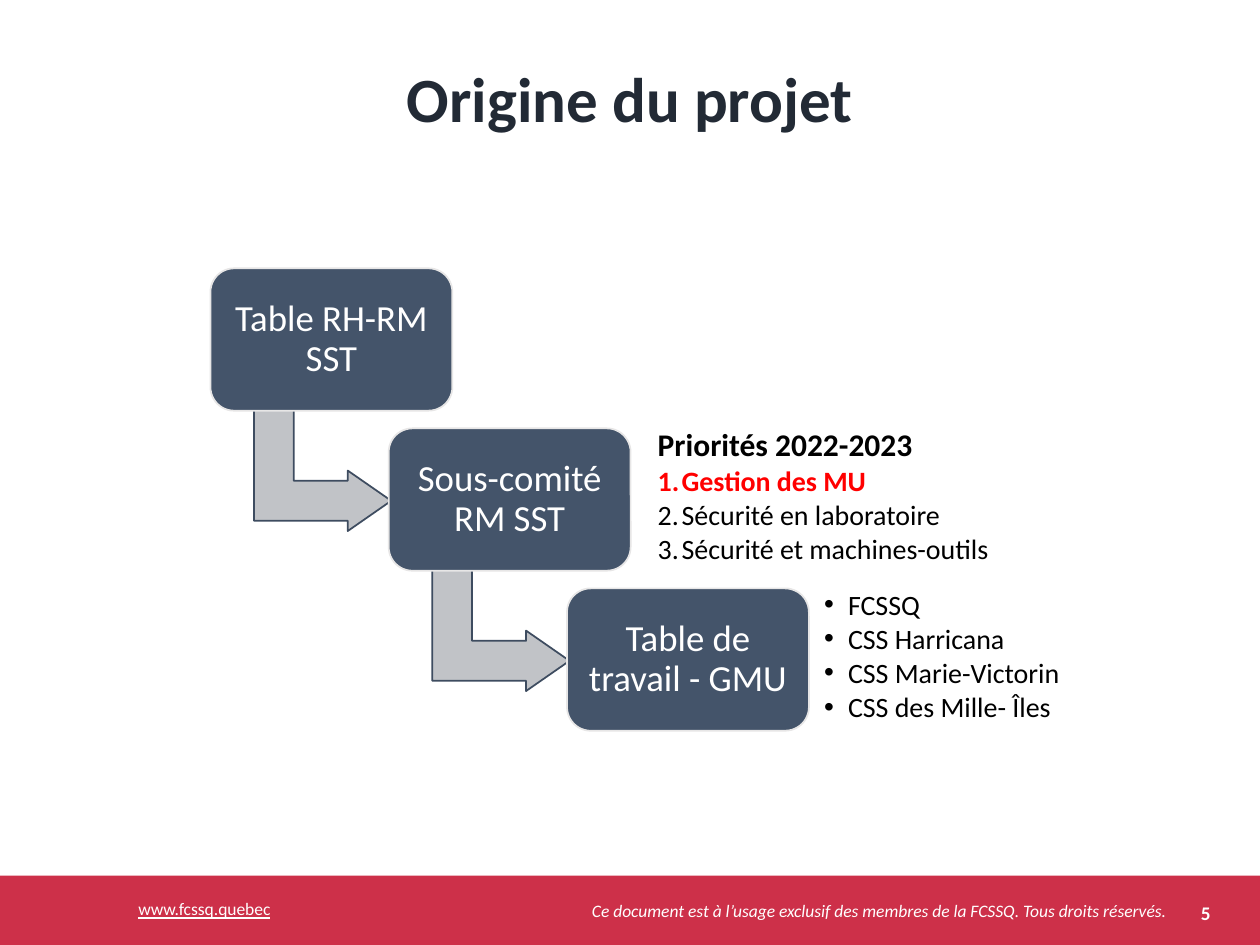
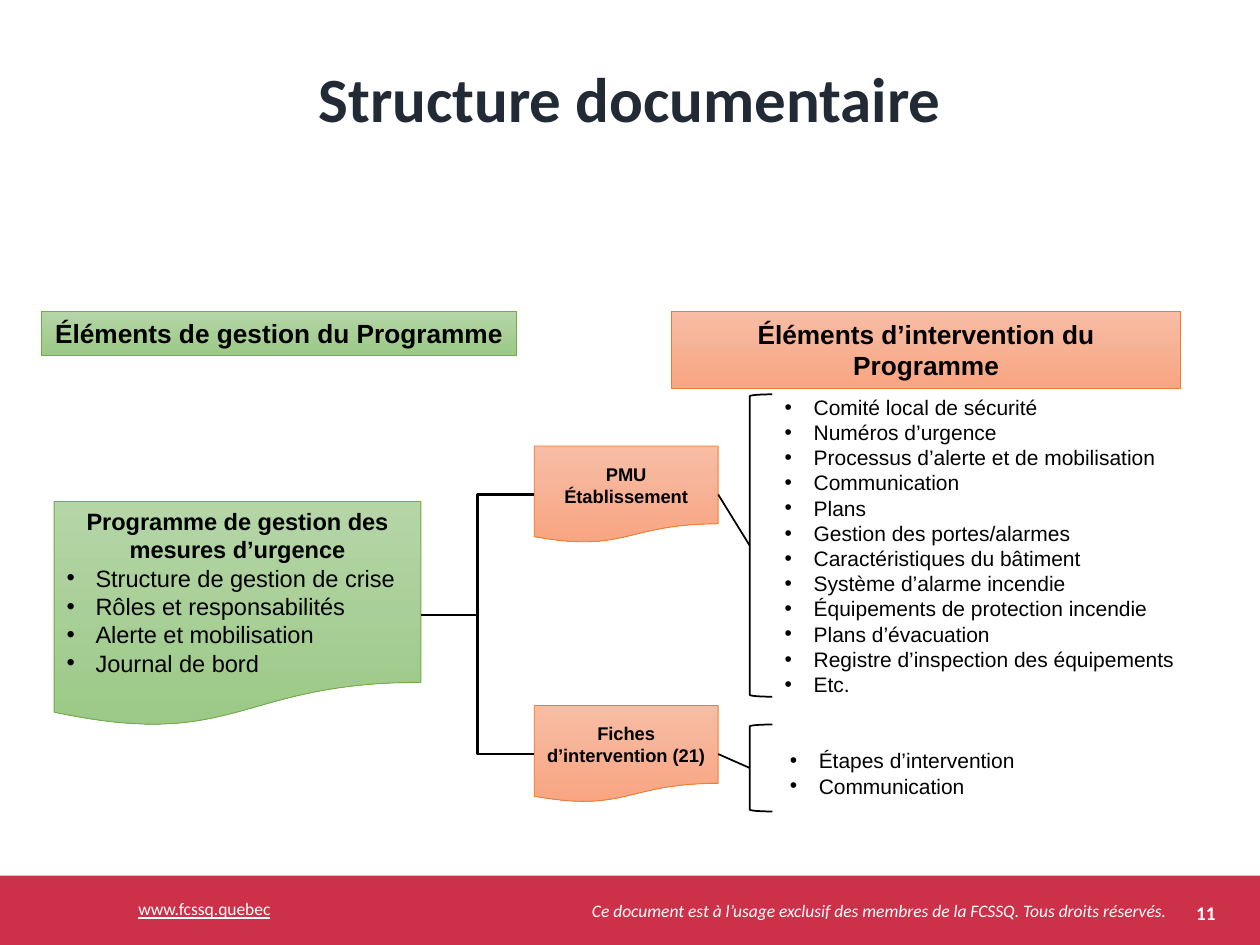
from dataclasses import dataclass

from lxml import etree
from pptx import Presentation
from pptx.dml.color import RGBColor
from pptx.enum.shapes import MSO_CONNECTOR, MSO_SHAPE
from pptx.enum.text import MSO_ANCHOR, PP_ALIGN
from pptx.oxml.ns import qn
from pptx.util import Inches, Pt

RECT, ROUNDED = MSO_SHAPE.RECTANGLE, MSO_SHAPE.ROUNDED_RECTANGLE
BENT_ARROW, BRACKET = MSO_SHAPE.BENT_UP_ARROW, MSO_SHAPE.LEFT_BRACKET
DOCUMENT = MSO_SHAPE.FLOWCHART_DOCUMENT
STRAIGHT, ELBOW = MSO_CONNECTOR.STRAIGHT, MSO_CONNECTOR.ELBOW
LEFT, CENTER = PP_ALIGN.LEFT, PP_ALIGN.CENTER
TOP, MIDDLE, BOTTOM = MSO_ANCHOR.TOP, MSO_ANCHOR.MIDDLE, MSO_ANCHOR.BOTTOM

COLUMNS, ROWS = 100, 75
SLIDE_WIDTH, SLIDE_HEIGHT = Inches(10), Inches(7.5)


@dataclass(frozen=True)
class Theme:
    heading_font: str = "Calibri"
    diagram_font: str = "Arial"
    white: str = "FFFFFF"
    black: str = "000000"
    title: str = "222A35"
    band: str = "CD3049"
    step: str = "44546A"
    step_edge: str = "E7E6E6"
    arrow: str = "C1C3C7"
    arrow_edge: str = "3E4C60"
    priority: str = "FF0000"
    management: tuple = ("B5D5A7", "9CC987", "70AD47")
    intervention: tuple = ("F7BDA5", "F8A582", "ED7D31")
    title_size: float = 36
    step_size: float = 21
    lead_size: float = 18
    note_size: float = 16
    heading_size: float = 15
    programme_size: float = 13.5
    list_size: float = 12
    page_size: float = 11
    document_size: float = 10.5
    footer_size: float = 10


THEME = Theme()


@dataclass(frozen=True)
class Line:
    text: str
    size: float
    color: str = THEME.black
    font: str = THEME.diagram_font
    bold: bool = False
    italic: bool = False
    underline: bool = False
    align: PP_ALIGN = LEFT
    bullet: str = ""
    hang: float = 0
    spacing: float = 1
    after: float = 0


def across(columns):
    return round(SLIDE_WIDTH * columns / COLUMNS)


def down(rows):
    return round(SLIDE_HEIGHT * rows / ROWS)


def place(area):
    left, top, width, height = area
    return across(left), down(top), across(width), down(height)


def rgb(color):
    return RGBColor.from_string(color)


def set_bullet(paragraph, line):
    properties = paragraph._p.get_or_add_pPr()
    properties.set("marL", str(across(line.hang)))
    properties.set("indent", str(-across(line.hang)))
    if line.bullet == "1.":
        etree.SubElement(properties, qn("a:buAutoNum"), type="arabicPeriod")
    elif line.bullet:
        etree.SubElement(properties, qn("a:buFont"), typeface=THEME.diagram_font)
        etree.SubElement(properties, qn("a:buChar"), char=line.bullet)


def write(shape, lines, anchor=MIDDLE, inset=(1, 0.5), wrap=True):
    frame = shape.text_frame
    frame.word_wrap = wrap
    frame.vertical_anchor = anchor
    frame.margin_left = frame.margin_right = across(inset[0])
    frame.margin_top = frame.margin_bottom = down(inset[1])
    for index, line in enumerate(lines):
        paragraph = frame.add_paragraph() if index else frame.paragraphs[0]
        set_bullet(paragraph, line)
        paragraph.alignment = line.align
        paragraph.line_spacing = line.spacing
        paragraph.space_after = Pt(line.after)
        run = paragraph.add_run()
        run.text = line.text
        run.font.name, run.font.size = line.font, Pt(line.size)
        run.font.bold, run.font.italic = line.bold, line.italic
        run.font.underline = line.underline
        run.font.color.rgb = rgb(line.color)


def add_label(slide, area, lines, **layout):
    write(slide.shapes.add_textbox(*place(area)), lines, **layout)


def add_block(slide, kind, area, fill, edge=None, weight=1):
    block = slide.shapes.add_shape(kind, *place(area))
    block.shadow.inherit = False
    block.fill.solid()
    block.fill.fore_color.rgb = rgb(fill)
    if edge:
        block.line.color.rgb = rgb(edge)
        block.line.width = Pt(weight)
    else:
        block.line.fill.background()
    return block


def add_panel(slide, kind, area, palette, lines):
    light, dark, edge = palette
    panel = add_block(slide, kind, area, light, edge, 0.5)
    panel.fill.gradient()
    panel.fill.gradient_angle = 270
    for stop, color in zip(panel.fill.gradient_stops, (light, dark)):
        stop.color.rgb = rgb(color)
    write(panel, lines)


def add_link(slide, kind, start, end, weight):
    link = slide.shapes.add_connector(
        kind, across(start[0]), down(start[1]), across(end[0]), down(end[1])
    )
    link.line.color.rgb = rgb(THEME.black)
    link.line.width = Pt(weight)
    etree.SubElement(link._element.spPr, qn("a:effectLst"))


def add_step(slide, left, top, text):
    step = add_block(slide, ROUNDED, (left, top, 19.2, 11.3), THEME.step, THEME.step_edge)
    write(step, [Line(text, THEME.step_size, THEME.white, THEME.heading_font,
                      align=CENTER, spacing=0.9)], inset=(0.9, 0.9))


def add_turn(slide, left, top):
    turn = add_block(slide, BENT_ARROW, (left + 4.1, top + 10.6, 9.6, 10.9),
                     THEME.arrow, THEME.arrow_edge)
    turn.rotation = 90
    for index, share in enumerate((0.33, 0.25, 0.36)):
        turn.adjustments[index] = share


def note(text, bullet, **style):
    return Line(text, **{"size": THEME.note_size, "font": THEME.heading_font,
                         "bullet": bullet, "hang": 1.9, "spacing": 0.9,
                         "after": 2.2, **style})


def bullets(texts, size):
    return [Line(text, size, bullet="•", hang=2.3) for text in texts]


def centered(text, size):
    return Line(text, size, bold=True, align=CENTER)


def add_document(slide, top, text, bracket_area, list_area, items):
    left, width, middle = 42.4, 14.6, top + 3.85
    bracket_left, bracket_top, _, bracket_height = bracket_area
    add_panel(slide, DOCUMENT, (left, top, width, 7.7), THEME.intervention,
              [centered(text, THEME.document_size)])
    add_block(slide, BRACKET, bracket_area, THEME.white, THEME.black)
    add_link(slide, STRAIGHT, (left + width, middle),
             (bracket_left, bracket_top + bracket_height / 2), 1)
    add_link(slide, ELBOW, (33.4, 48.8), (left, middle), 1.5)
    details = add_block(slide, RECT, list_area, THEME.white)
    write(details, bullets(items, THEME.list_size))


def start_slide(deck, title, page):
    slide = deck.slides.add_slide(deck.slide_layouts[6])
    small = {"size": THEME.footer_size, "color": THEME.white, "font": THEME.heading_font}
    add_block(slide, RECT, (0, 69.5, COLUMNS, 5.5), THEME.band)
    add_label(slide, (92.6, 71, 6.2, 2.9),
              [Line(page, THEME.page_size, THEME.white, THEME.heading_font,
                    bold=True, align=CENTER)], anchor=TOP)
    add_label(slide, (46, 70.9, 48.3, 2.7),
              [Line("Ce document est à l’usage exclusif des membres de la FCSSQ. "
                    "Tous droits réservés.", italic=True, **small)],
              anchor=TOP, wrap=False)
    add_label(slide, (10, 70.8, 13, 2.7),
              [Line("www.fcssq.quebec", underline=True, **small)],
              anchor=TOP, wrap=False)
    add_label(slide, (0, 3.5, COLUMNS, 7.8),
              [Line(title, THEME.title_size, THEME.title, THEME.heading_font,
                    bold=True, align=CENTER, spacing=0.9)], anchor=BOTTOM)
    return slide


def build_origin(deck):
    slide = start_slide(deck, "Origine du projet", "5")
    steps = ("Table RH-RM SST", "Sous-comité RM SST", "Table de travail - GMU")
    for index, text in enumerate(steps):
        left, top = 16.7 + 14.15 * index, 21.3 + 12.7 * index
        if index < len(steps) - 1:
            add_turn(slide, left, top)
        add_step(slide, left, top, text)
    add_label(slide, (51.5, 34, 38.4, 10.9), [
        note("Priorités 2022-2023", "", size=THEME.lead_size, bold=True),
        note("Gestion des MU", "1.", color=THEME.priority, bold=True),
        note("Sécurité en laboratoire", "1."),
        note("Sécurité et machines-outils", "1."),
    ], inset=(0.7, 0.7))
    members = ("FCSSQ", "CSS Harricana", "CSS Marie-Victorin", "CSS des Mille- Îles")
    add_label(slide, (64.7, 47.6, 27.5, 9.1),
              [note(member, "•") for member in members], inset=(0.7, 0.7))


def build_structure(deck):
    slide = start_slide(deck, "Structure documentaire", "11")
    add_panel(slide, RECT, (3.3, 24.7, 37.7, 3.5), THEME.management,
              [centered("Éléments de gestion du Programme", THEME.heading_size)])
    add_panel(slide, RECT, (53.3, 24.7, 40.4, 6.1), THEME.intervention,
              [centered("Éléments d’intervention du Programme", THEME.heading_size)])
    programme = ("Structure de gestion de crise", "Rôles et responsabilités",
                 "Alerte et mobilisation", "Journal de bord")
    add_panel(slide, DOCUMENT, (4.3, 39.8, 29.1, 17.9), THEME.management,
              [centered("Programme de gestion des mesures d’urgence",
                        THEME.programme_size),
               *bullets(programme, THEME.programme_size)])
    add_document(slide, 35.4, "PMU Établissement",
                 (59.5, 31.3, 1.8, 24), (61.3, 31.3, 37.3, 24), (
                     "Comité local de sécurité",
                     "Numéros d’urgence",
                     "Processus d’alerte et de mobilisation",
                     "Communication",
                     "Plans",
                     "Gestion des portes/alarmes",
                     "Caractéristiques du bâtiment",
                     "Système d’alarme incendie",
                     "Équipements de protection incendie",
                     "Plans d’évacuation",
                     "Registre d’inspection des équipements",
                     "Etc."))
    add_document(slide, 56, "Fiches d’intervention (21)",
                 (59.5, 57.5, 1.8, 6.9), (61.7, 57.9, 37.3, 6.9),
                 ("Étapes d’intervention", "Communication"))


def main():
    deck = Presentation()
    deck.slide_width, deck.slide_height = SLIDE_WIDTH, SLIDE_HEIGHT
    build_origin(deck)
    build_structure(deck)
    deck.save("out.pptx")


if __name__ == "__main__":
    main()
